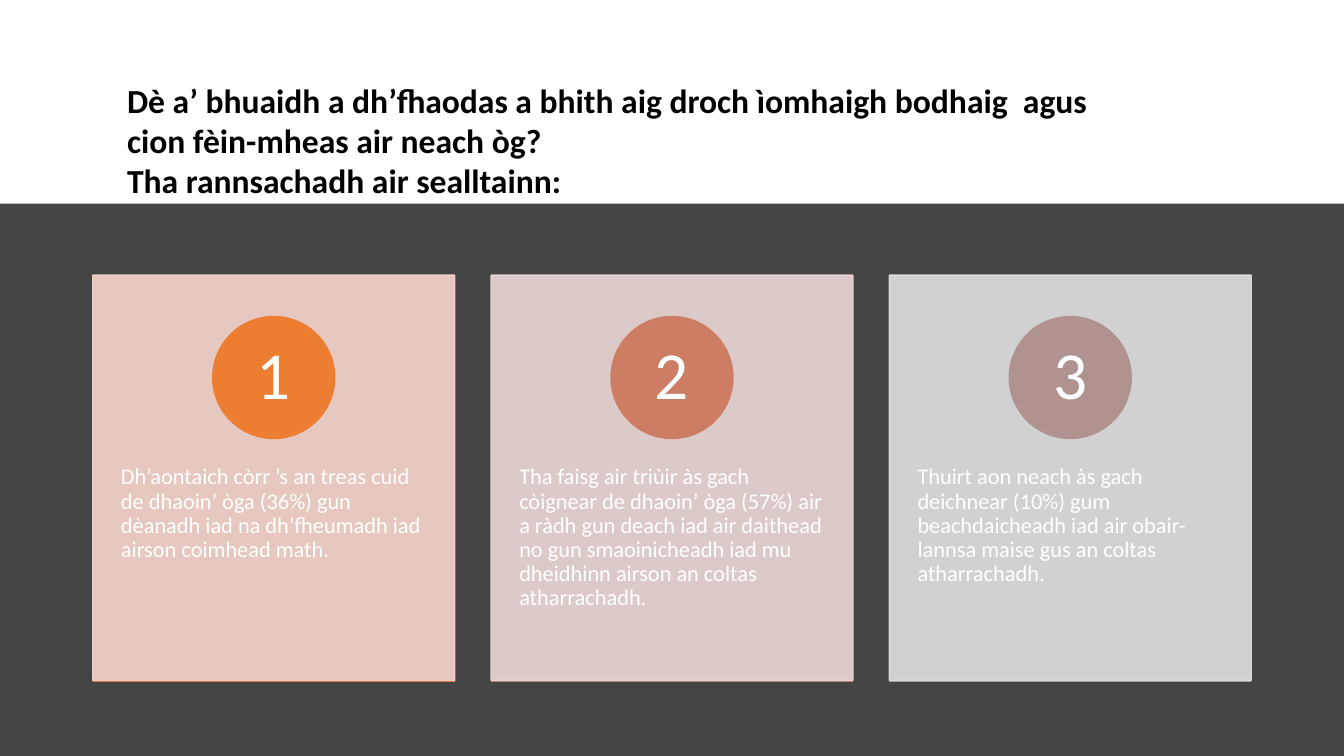
from lxml.etree import SubElement
from pptx import Presentation
from pptx.dml.color import RGBColor
from pptx.enum.shapes import MSO_CONNECTOR, MSO_SHAPE
from pptx.enum.text import MSO_ANCHOR, MSO_AUTO_SIZE, PP_ALIGN
from pptx.oxml.ns import qn
from pptx.util import Inches, Pt

COLORS = {"background": "454545", "band": "FFFFFF", "title": "000000", "text": "FFFFFF"}
FINDINGS = [
    ("Dh’aontaich còrr ’s an treas cuid de dhaoin’ òga (36%) gun dèanadh iad na "
     "dh’fheumadh iad airson coimhead math.",
     {"card": "F8D7CE", "circle": "ED7D31", "rule": "DC7A4B"}),
    ("Tha faisg air triùir às gach còignear de dhaoin’ òga (57%) air a ràdh gun deach iad "
     "air daithead no gun smaoinicheadh iad mu dheidhinn airson an coltas atharrachadh.",
     {"card": "EDD9D7", "circle": "CC7D64", "rule": "BD867B"}),
    ("Thuirt aon neach às gach deichnear (10%) gum beachdaicheadh iad air obair-lannsa "
     "maise gus an coltas atharrachadh.",
     {"card": "E1E1E1", "circle": "B09391", "rule": "A5A5A5"}),
]
CARD_LEFT, CARD_TOP, CARD_WIDTH, CARD_HEIGHT, CARD_PITCH = 0.92, 2.73, 3.59, 4.02, 3.95
CIRCLE_SIZE = 1.21


def add_filled(kind, left, top, width, height, color, outlined=True, opacity=None):
    shape = slide.shapes.add_shape(kind, Inches(left), Inches(top), Inches(width), Inches(height))
    shape.shadow.inherit = False
    shape.fill.solid()
    shape.fill.fore_color.rgb = RGBColor.from_string(color)
    if outlined:
        shape.line.color.rgb = RGBColor.from_string(color)
        shape.line.width = Pt(1)
    else:
        shape.line.fill.background()
    if opacity:
        for tint in shape._element.spPr.iter(qn("a:srgbClr")):
            SubElement(tint, qn("a:alpha"), val=str(opacity * 1000))
    return shape


def write(frame, text, size, align, anchor, inset_x, inset_y):
    frame.word_wrap = True
    frame.vertical_anchor = anchor
    frame.margin_left = frame.margin_right = Inches(inset_x)
    frame.margin_top = frame.margin_bottom = Inches(inset_y)
    paragraph = frame.paragraphs[0]
    paragraph.text = text
    paragraph.alignment = align
    paragraph.line_spacing = 0.9
    paragraph.font.size = Pt(size)
    paragraph.font.name = "Calibri"
    paragraph.font.color.rgb = RGBColor.from_string(COLORS["text"])


prs = Presentation()
prs.slide_width, prs.slide_height = Inches(13.33), Inches(7.5)
slide = prs.slides.add_slide(prs.slide_layouts[5])
slide.background.fill.solid()
slide.background.fill.fore_color.rgb = RGBColor.from_string(COLORS["background"])

band = add_filled(MSO_SHAPE.RECTANGLE, 0, -0.01, 13.33, 2.03, COLORS["band"], outlined=False)

for index, (finding, palette) in enumerate(FINDINGS):
    left = CARD_LEFT + index * CARD_PITCH
    add_filled(MSO_SHAPE.RECTANGLE, left, CARD_TOP, CARD_WIDTH, CARD_HEIGHT, palette["card"], opacity=90)

    statement = slide.shapes.add_textbox(Inches(left), Inches(4.26), Inches(CARD_WIDTH), Inches(2.41))
    write(statement.text_frame, finding, 16, PP_ALIGN.LEFT, MSO_ANCHOR.TOP, 0.28, 0.36)

    circle = add_filled(MSO_SHAPE.OVAL, left + (CARD_WIDTH - CIRCLE_SIZE) / 2, 3.14,
                        CIRCLE_SIZE, CIRCLE_SIZE, palette["circle"])
    write(circle.text_frame, str(index + 1), 48, PP_ALIGN.CENTER, MSO_ANCHOR.MIDDLE, 0.09, 0.01)

    rule = slide.shapes.add_connector(MSO_CONNECTOR.STRAIGHT, Inches(left), Inches(6.76),
                                      Inches(left + CARD_WIDTH), Inches(6.76))
    rule.line.color.rgb = RGBColor.from_string(palette["rule"])
    rule.line.width = Pt(1)
    SubElement(rule._element.spPr, qn("a:effectLst"))

title = slide.shapes.title
title.left, title.top, title.width, title.height = (Inches(n) for n in (1.16, 0.74, 10.36, 1.31))
heading = title.text_frame
heading.text = ("Dè a’ bhuaidh a dh’fhaodas a bhith aig droch ìomhaigh bodhaig  agus "
                "cion fèin-mheas air neach òg?\nTha rannsachadh air sealltainn:")
heading.word_wrap = True
heading.auto_size = MSO_AUTO_SIZE.NONE
heading.vertical_anchor = MSO_ANCHOR.TOP
for paragraph in heading.paragraphs:
    paragraph.alignment = PP_ALIGN.LEFT
    paragraph.font.size = Pt(24)
    paragraph.font.bold = True
    paragraph.font.name = "Calibri"
    paragraph.font.color.rgb = RGBColor.from_string(COLORS["title"])
slide.shapes._spTree.append(title._element)

prs.save("out.pptx")
